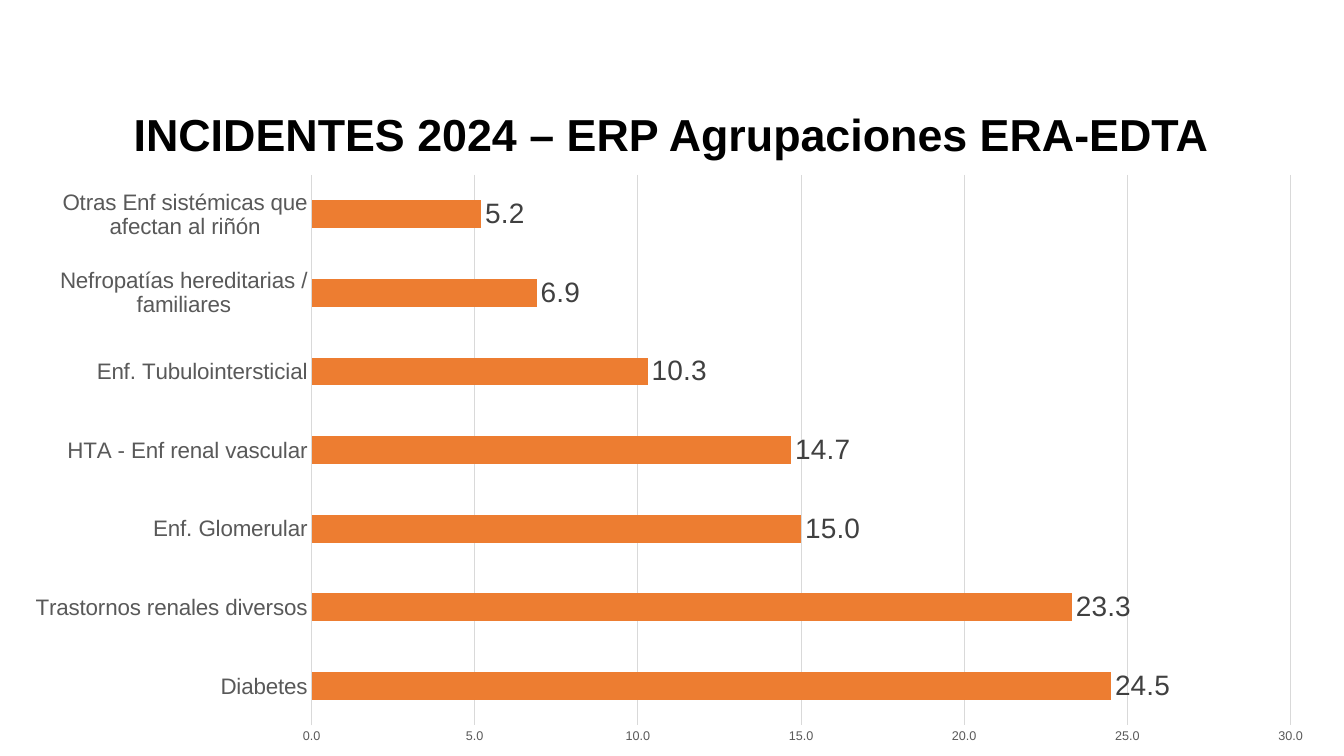
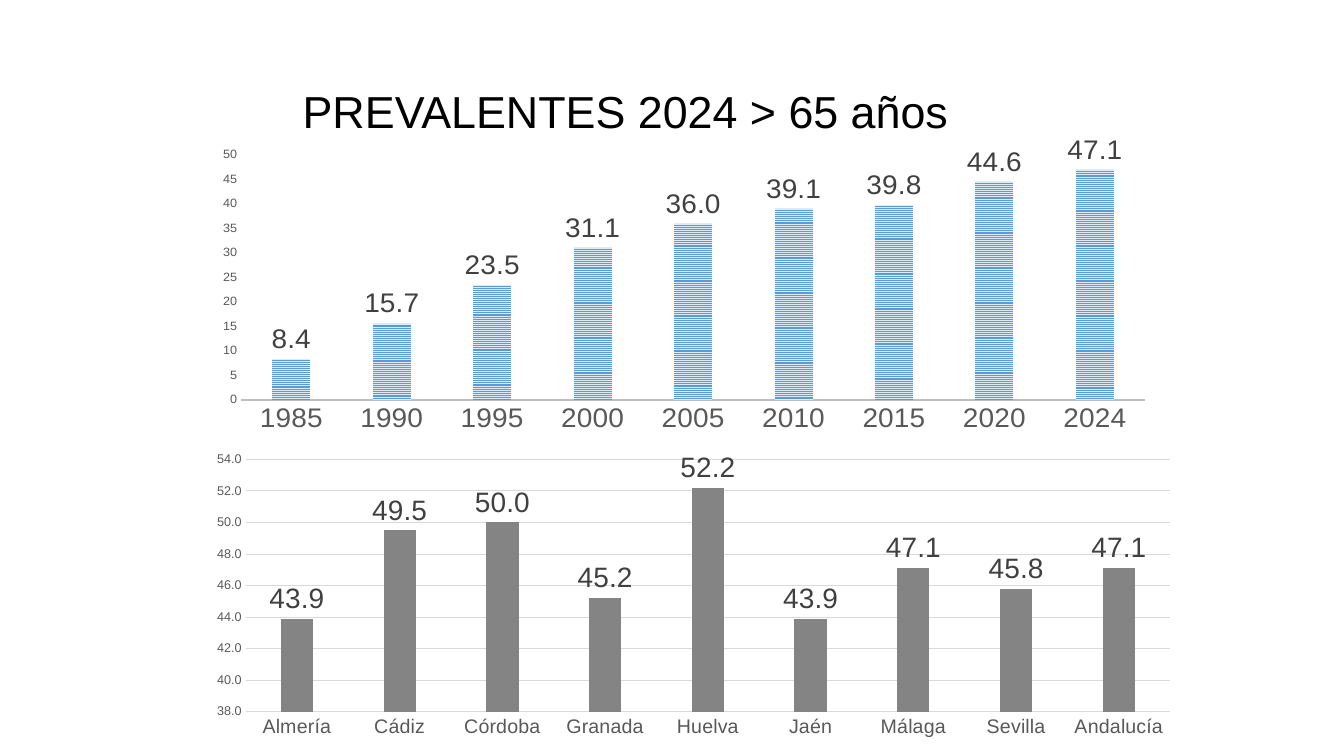
from lxml import etree
from pptx import Presentation
from pptx.chart.data import CategoryChartData
from pptx.dml.color import RGBColor
from pptx.enum.chart import XL_CHART_TYPE as CT, XL_LABEL_POSITION as LP, XL_TICK_MARK as TM
from pptx.enum.dml import MSO_PATTERN
from pptx.enum.text import PP_ALIGN
from pptx.oxml.ns import qn
from pptx.util import Cm, Pt

FONT = "Arial"
COLORS = {
    "title": "000000", "axis": "595959", "label": "404040", "grid": "D9D9D9",
    "baseline": "BFBFBF", "orange": "ED7D31", "gray": "848484",
    "blue": "5B9BD5", "pale": "DEEBF7",
}


def style_font(font, size, color, bold=False):
    font.name, font.size, font.bold = FONT, Pt(size), bold
    font.color.rgb = RGBColor.from_string(COLORS[color])


def add_text(s, text, box, size=32, color="title", bold=False, align=PP_ALIGN.CENTER):
    tf = s.shapes.add_textbox(*map(Cm, box)).text_frame
    tf.word_wrap = True
    p = tf.paragraphs[0]
    p.alignment = align
    r = p.add_run()
    r.text = text
    style_font(r.font, size, color, bold)


prs = Presentation()
prs.slide_width, prs.slide_height = Cm(33.87), Cm(19.05)

slides = [
    {
        "title": "INCIDENTES 2024 – ERP Agrupaciones ERA-EDTA",
        "box": (2.46, 2.57, 28.93, 1.3),
        "bold": True,
        "charts": [
            {
                "type": CT.BAR_CLUSTERED, "box": (0.23, 4.11, 33.27, 14.94),
                "data": {
                    "Diabetes": 24.5,
                    "Trastornos renales diversos": 23.3,
                    "Enf. Glomerular": 15.0,
                    "HTA - Enf renal vascular": 14.7,
                    "Enf. Tubulointersticial": 10.3,
                    "Nefropatías hereditarias / familiares": 6.9,
                    "Otras Enf sistémicas que afectan al riñón": 5.2,
                },
                "scale": (0, 30, 5), "format": "0.0", "grid": True,
                "cat_size": 16, "line": ("grid", 0.75),
                "gap": 182, "overlap": 0, "fill": "orange", "plot": None,
            },
        ],
    },
    {
        "title": "PREVALENTES 2024 > 65 años",
        "box": (2.92, 1.98, 25.7, 1.35),
        "bold": False,
        "charts": [
            {
                "type": CT.COLUMN_CLUSTERED, "box": (5.36, 3.4, 23.98, 8.36),
                "data": {
                    "1985": 8.4, "1990": 15.7, "1995": 23.5, "2000": 31.1, "2005": 36.0,
                    "2010": 39.1, "2015": 39.8, "2020": 44.6, "2024": 47.1,
                },
                "scale": (0, 50, 5), "format": "0", "grid": False,
                "cat_size": 20, "line": ("baseline", 1.5),
                "gap": 164, "overlap": -22, "fill": ("blue", "pale"),
                "plot": {"x": 0.03, "y": 0.02, "w": 0.95, "h": 0.77},
            },
            {
                "type": CT.COLUMN_CLUSTERED, "box": (4.95, 11.2, 24.79, 7.57),
                "data": {
                    "Almería": 43.9, "Cádiz": 49.5, "Córdoba": 50.0, "Granada": 45.2, "Huelva": 52.2,
                    "Jaén": 43.9, "Málaga": 47.1, "Sevilla": 45.8, "Andalucía": 47.1,
                },
                "scale": (38, 54, 2), "format": "0.0", "grid": True,
                "cat_size": 14, "line": ("grid", 0.75),
                "gap": 219, "overlap": -27, "fill": "gray",
                "plot": {"x": 0.05, "y": 0.05, "w": 0.94, "h": 0.84},
            },
        ],
    },
]

for content in slides:
    s = prs.slides.add_slide(prs.slide_layouts[6])
    add_text(s, content["title"], content["box"], bold=content["bold"])

    for c in content["charts"]:
        data = CategoryChartData(number_format="0.0")
        data.categories = list(c["data"])
        data.add_series("Series 1", list(c["data"].values()))
        chart = s.shapes.add_chart(c["type"], *map(Cm, c["box"]), data).chart
        chart.has_title = chart.has_legend = False
        style_font(chart.font, 10, "title")

        cat, val = chart.category_axis, chart.value_axis
        for axis, size in ((cat, c["cat_size"]), (val, 9)):
            axis.major_tick_mark = axis.minor_tick_mark = TM.NONE
            style_font(axis.tick_labels.font, size, "axis")
        color, width = c["line"]
        cat.format.line.color.rgb = RGBColor.from_string(COLORS[color])
        cat.format.line.width = Pt(width)

        val.minimum_scale, val.maximum_scale, val.major_unit = c["scale"]
        val.tick_labels.number_format = c["format"]
        val.tick_labels.number_format_is_linked = False
        val.format.line.fill.background()
        val.has_major_gridlines = c["grid"]
        if c["grid"]:
            grid = val.major_gridlines.format.line
            grid.color.rgb = RGBColor.from_string(COLORS["grid"])
            grid.width = Pt(0.75)

        plot = chart.plots[0]
        plot.gap_width, plot.overlap = c["gap"], c["overlap"]
        plot.vary_by_categories = False
        plot.has_data_labels = True
        labels = plot.data_labels
        labels.show_value = True
        labels.position = LP.OUTSIDE_END
        labels.number_format = "0.0"
        labels.number_format_is_linked = False
        style_font(labels.font, 20, "label")

        series = plot.series[0]
        series.invert_if_negative = False
        fill = series.format.fill
        if isinstance(c["fill"], tuple):
            fore, back = c["fill"]
            fill.patterned()
            fill.pattern = MSO_PATTERN.NARROW_HORIZONTAL
            fill.fore_color.rgb = RGBColor.from_string(COLORS[fore])
            fill.back_color.rgb = RGBColor.from_string(COLORS[back])
        else:
            fill.solid()
            fill.fore_color.rgb = RGBColor.from_string(COLORS[c["fill"]])

        if c["plot"]:
            area = chart._chartSpace.find(".//" + qn("c:plotArea"))
            for old in area.findall(qn("c:layout")):
                area.remove(old)
            layout = etree.Element(qn("c:layout"))
            area.insert(0, layout)
            manual = etree.SubElement(layout, qn("c:manualLayout"))
            settings = {"layoutTarget": "inner", "xMode": "edge", "yMode": "edge", **c["plot"]}
            for tag, value in settings.items():
                etree.SubElement(manual, qn("c:" + tag)).set("val", str(value))

prs.save("out.pptx")
